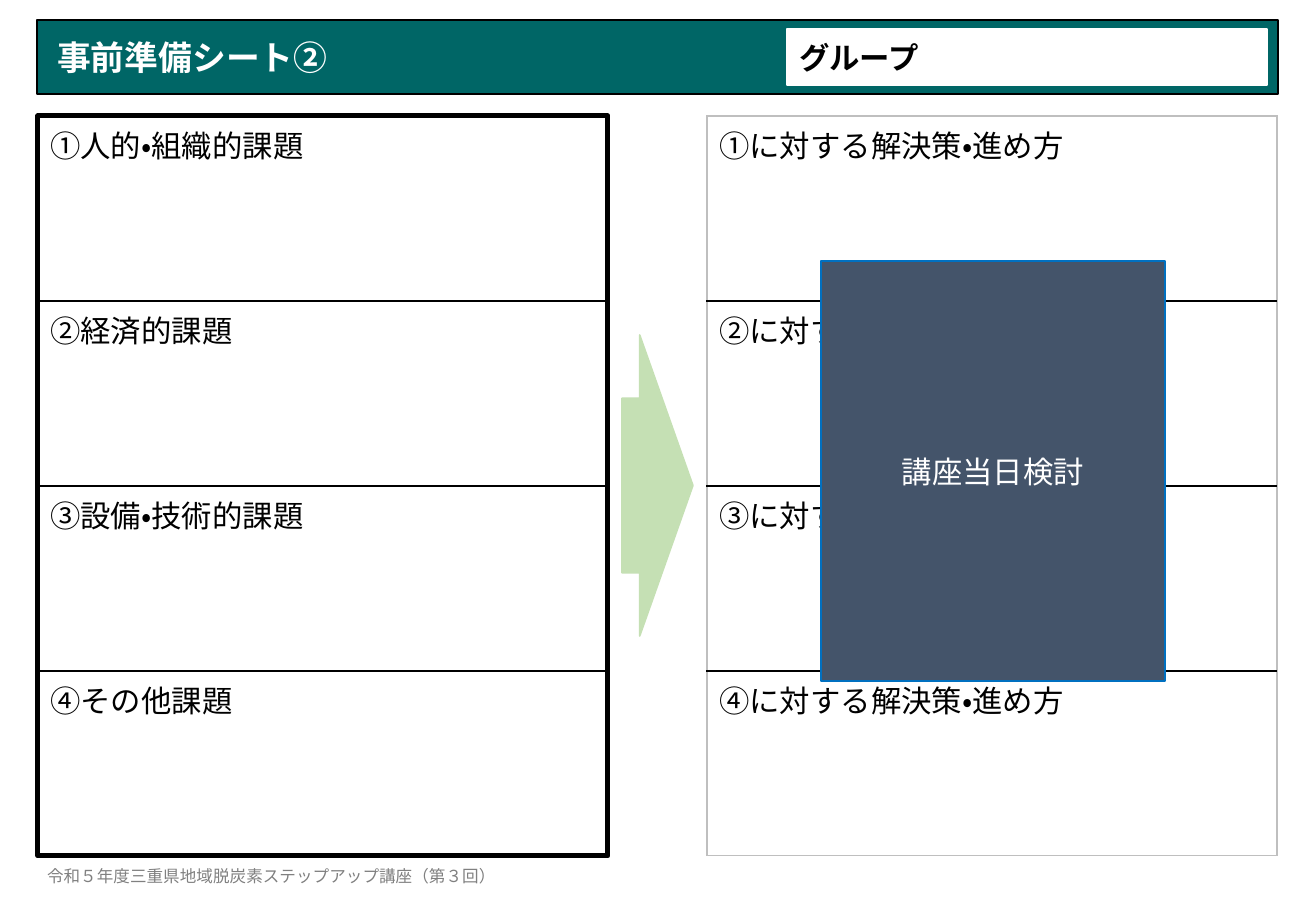
from lxml import etree
from pptx import Presentation
from pptx.dml.color import RGBColor
from pptx.enum.lang import MSO_LANGUAGE_ID
from pptx.enum.shapes import MSO_SHAPE
from pptx.enum.text import MSO_ANCHOR, MSO_AUTO_SIZE, PP_ALIGN
from pptx.oxml.ns import qn
from pptx.util import Pt

RECTANGLE, RIGHT_ARROW = MSO_SHAPE.RECTANGLE, MSO_SHAPE.RIGHT_ARROW
MIDDLE = MSO_ANCHOR.MIDDLE
LEFT, CENTER = PP_ALIGN.LEFT, PP_ALIGN.CENTER
NO_AUTOFIT = MSO_AUTO_SIZE.NONE
JAPANESE = MSO_LANGUAGE_ID.JAPANESE

EMU_PER_PX = 7526
TITLE_ONLY = 5
LATIN_FONT, CJK_FONT = "Calibri", "Noto Sans CJK JP"
COLORS = {
    "teal": "006666",
    "white": "FFFFFF",
    "black": "000000",
    "footer": "808080",
    "arrow": "C5E0B4",
    "cover": "44546A",
    "blue": "0070C0",
    "edge": "BFBFBF",
}

# Both tables share one size; the frame fits the left one
TABLE_TOP, TABLE_WIDTH, ROW_HEIGHT = 116, 570, 185
LEFT_TABLE, RIGHT_TABLE = 38, 707
ISSUES = ["①人的・組織的課題", "②経済的課題", "③設備・技術的課題", "④その他課題"]
SOLUTIONS = [f"{number}に対する解決策・進め方" for number in "①②③④"]


def px(length):
    return length * EMU_PER_PX


def box(*lengths):
    return [px(length) for length in lengths]


def color(name):
    return RGBColor.from_string(COLORS[name])


def write(frame, text, size, color_name, bold=False, font_name=LATIN_FONT, align=LEFT):
    paragraph = frame.paragraphs[0]
    paragraph.alignment = align
    run = paragraph.add_run()
    run.text = text
    values = {"name": font_name, "size": Pt(size), "bold": bold, "language_id": JAPANESE}
    for attribute, value in values.items():
        setattr(run.font, attribute, value)
    run.font.color.rgb = color(color_name)
    return paragraph


def format_frame(frame, margins):
    values = {"word_wrap": True, "auto_size": NO_AUTOFIT, "vertical_anchor": MIDDLE}
    sides = ("left", "top", "right", "bottom")
    values.update({f"margin_{side}": px(margin) for side, margin in zip(sides, margins)})
    for attribute, value in values.items():
        setattr(frame, attribute, value)


def paint(shape, fill, line, line_width):
    if fill:
        shape.fill.solid()
        shape.fill.fore_color.rgb = color(fill)
    else:
        shape.fill.background()
    shape.line.color.rgb = color(line)
    shape.line.width = Pt(line_width)


def add_title(slide, text):
    title = slide.shapes.title
    title.left, title.top, title.width, title.height = box(37, 20, 1241, 74)
    paint(title, "teal", "black", 1.5)
    format_frame(title.text_frame, (20, 6, 12, 6))
    write(title.text_frame, text, 20, "white", bold=True)


def add_block(slide, kind, place, fill, line, line_width=1):
    shape = slide.shapes.add_shape(kind, *box(*place))
    shape.shadow.inherit = False
    paint(shape, fill, line, line_width)
    format_frame(shape.text_frame, (12, 6, 12, 6))
    return shape


def add_footer(slide, text):
    frame = slide.shapes.add_textbox(*box(37, 855, 503, 45)).text_frame
    format_frame(frame, (10, 5, 10, 5))
    write(frame, text, 9.8, "footer", font_name=CJK_FONT).line_spacing = 0.9


def set_border(cell, side, color_name, width):
    line = etree.Element(qn(f"a:ln{side}"), w=str(Pt(width)))
    fill = etree.SubElement(line, qn("a:solidFill"))
    etree.SubElement(fill, qn("a:srgbClr"), val=COLORS[color_name])
    return line


def add_borders(cell, is_first, is_last):
    edge, inner = ("edge", 0.75), ("black", 1)
    sides = {"L": edge, "R": edge, "T": edge if is_first else inner,
             "B": edge if is_last else inner}
    properties = cell._tc.get_or_add_tcPr()
    for index, (side, style) in enumerate(sides.items()):
        properties.insert(index, set_border(cell, side, *style))


def add_sheet(slide, left, headings):
    count = len(headings)
    place = box(left, TABLE_TOP, TABLE_WIDTH, ROW_HEIGHT * count)
    table = slide.shapes.add_table(count, 1, *place).table
    table.first_row = table.horz_banding = False
    for index, heading in enumerate(headings):
        cell = table.cell(index, 0)
        cell.fill.background()
        write(cell.text_frame, heading, 18, "black")
        add_borders(cell, index == 0, index == count - 1)


def main():
    presentation = Presentation()
    presentation.slide_width, presentation.slide_height = box(1316, 911)
    slide = presentation.slides.add_slide(presentation.slide_layouts[TITLE_ONLY])

    # Header bar with the group name field
    add_title(slide, "事前準備シート②")
    group = add_block(slide, RECTANGLE, (787, 29, 480, 56), "white", "white")
    write(group.text_frame, "グループ", 18, "black", bold=True)

    add_footer(slide, "令和５年度三重県地域脱炭素ステップアップ講座（第３回）")

    # Issues lead to solutions
    add_sheet(slide, LEFT_TABLE, ISSUES)
    add_sheet(slide, RIGHT_TABLE, SOLUTIONS)
    arrow = add_block(slide, RIGHT_ARROW, (622, 335, 71, 301), "arrow", "arrow")
    arrow.adjustments[0], arrow.adjustments[1] = 0.58, 0.75

    # Cover over the solutions and frame around the issues
    cover = add_block(slide, RECTANGLE, (821, 261, 344, 420), "cover", "blue")
    write(cover.text_frame, "講座当日検討", 18, "white", align=CENTER)
    frame_place = (LEFT_TABLE, TABLE_TOP, TABLE_WIDTH, ROW_HEIGHT * len(ISSUES))
    add_block(slide, RECTANGLE, frame_place, None, "black", 3)

    presentation.save("out.pptx")


if __name__ == "__main__":
    main()
